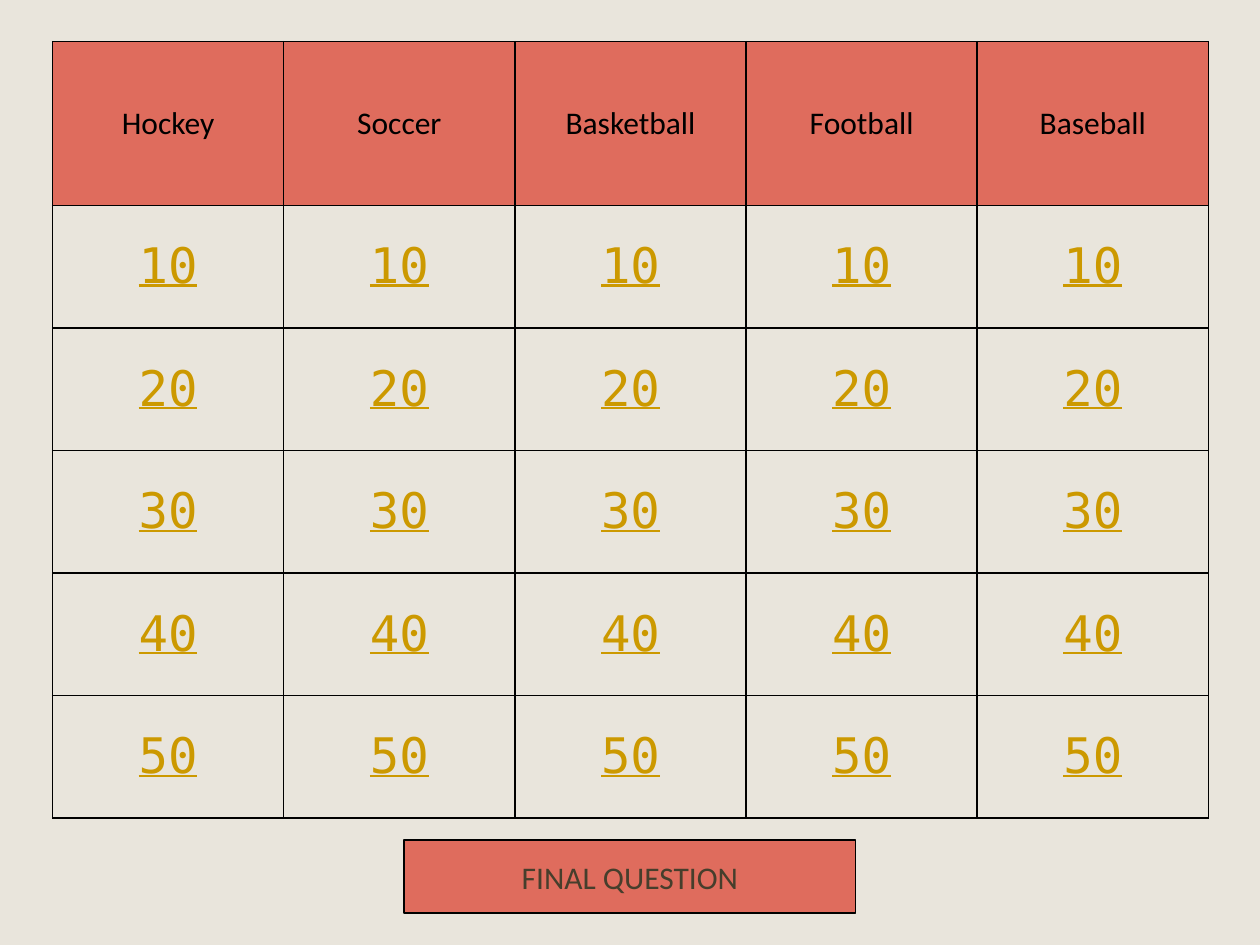
from lxml.etree import SubElement
from pptx import Presentation
from pptx.dml.color import RGBColor
from pptx.enum.shapes import MSO_SHAPE
from pptx.enum.text import MSO_ANCHOR, PP_ALIGN
from pptx.oxml.ns import qn
from pptx.util import Cm, Pt

SAND = RGBColor(0xE9, 0xE5, 0xDC)
CORAL = RGBColor(0xDF, 0x6C, 0x5D)
GOLD = RGBColor(0xCC, 0x99, 0x00)
OLIVE = RGBColor(0x46, 0x3E, 0x2C)
BLACK = RGBColor(0, 0, 0)

CATEGORIES = ["Hockey", "Soccer", "Basketball", "Football", "Baseball"]
POINTS = [10, 20, 30, 40, 50]


def write(frame, text, font="Calibri", size=18, color=BLACK, underline=None):
    """Put one centred line of formatted text into a text frame."""
    para = frame.paragraphs[0]
    para.alignment = PP_ALIGN.CENTER
    span = para.add_run()
    span.text = text
    span.font.name = font
    span.font.size = Pt(size)
    span.font.color.rgb = color
    span.font.underline = underline


class QuizBoard:
    def __init__(self, page):
        self.page = page
        self.border = Pt(1)
        self.heading = {"font": "Calibri", "size": 18, "color": BLACK}
        self.score = {"font": "DejaVu Sans Mono", "size": 28,
                      "color": GOLD, "underline": True}

    def background(self, color):
        fill = self.page.background.fill
        fill.solid()
        fill.fore_color.rgb = color

    def outline_cell(self, cell):
        properties = cell._tc.get_or_add_tcPr()
        for side in ("a:lnL", "a:lnR", "a:lnT", "a:lnB"):
            line = SubElement(properties, qn(side), w=str(self.border))
            paint = SubElement(line, qn("a:solidFill"))
            SubElement(paint, qn("a:srgbClr"), val=str(BLACK))

    def cell(self, cell, text, fill=None, **style):
        cell.vertical_anchor = MSO_ANCHOR.MIDDLE
        self.outline_cell(cell)
        if fill is None:
            cell.fill.background()
        else:
            cell.fill.solid()
            cell.fill.fore_color.rgb = fill
        write(cell.text_frame, text, **style)

    def grid(self, left, top, column_width, header_height, row_height):
        columns, rows = len(CATEGORIES), len(POINTS) + 1
        table = self.page.shapes.add_table(
            rows, columns, left, top, column_width * columns,
            header_height + row_height * len(POINTS)).table
        table.first_row = table.horz_banding = False
        for column in table.columns:
            column.width = column_width
        for index, row in enumerate(table.rows):
            row.height = row_height if index else header_height
        for column, category in enumerate(CATEGORIES):
            self.cell(table.cell(0, column), category, CORAL, **self.heading)
            for row, points in enumerate(POINTS, start=1):
                self.cell(table.cell(row, column), str(points), **self.score)

    def button(self, left, top, width, height, text, **style):
        box = self.page.shapes.add_shape(
            MSO_SHAPE.RECTANGLE, left, top, width, height)
        box.shadow.inherit = False
        box.fill.solid()
        box.fill.fore_color.rgb = CORAL
        box.line.color.rgb = BLACK
        box.line.width = self.border
        box.text_frame.vertical_anchor = MSO_ANCHOR.MIDDLE
        write(box.text_frame, text, **style)


def main():
    deck = Presentation()
    deck.slide_width, deck.slide_height = Cm(25.4), Cm(19.05)
    board = QuizBoard(deck.slides.add_slide(deck.slide_layouts[6]))
    board.background(SAND)

    # Categories and point values
    board.grid(Cm(1.06), Cm(0.84), Cm(4.66), Cm(3.3), Cm(2.47))

    # Last round
    board.button(Cm(8.15), Cm(16.93), Cm(9.1), Cm(1.48),
                 "FINAL QUESTION", color=OLIVE)

    deck.save("out.pptx")


if __name__ == "__main__":
    main()
